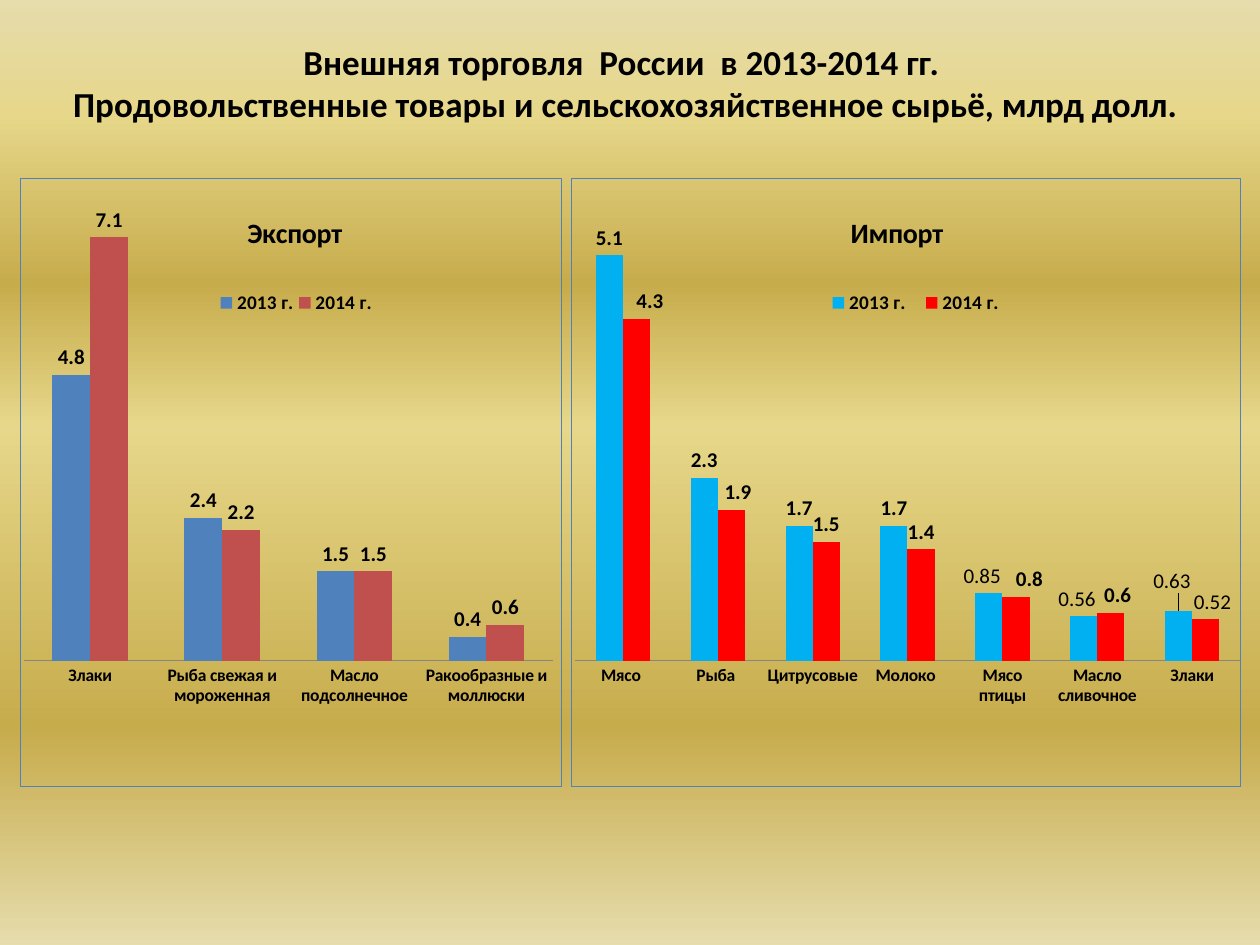
from lxml.etree import fromstring
from pptx import Presentation
from pptx.chart.data import CategoryChartData
from pptx.dml.color import RGBColor
from pptx.enum.chart import XL_CHART_TYPE as ChartType, XL_LABEL_POSITION as LabelPos
from pptx.enum.chart import XL_LEGEND_POSITION as LegendPos, XL_TICK_MARK as Tick
from pptx.enum.shapes import MSO_SHAPE as Shape
from pptx.enum.text import MSO_ANCHOR as Anchor, PP_ALIGN as Align
from pptx.oxml.ns import nsdecls, qn
from pptx.util import Inches, Pt

FONT = "Calibri"
HEADING = (
    "Внешняя торговля  России  в 2013-2014 гг. ",
    "Продовольственные товары и сельскохозяйственное сырьё, млрд долл.",
)
BACKDROP = ((0, "E6DCAC"), (12, "E6D78A"), (30, "C7AC4C"),
            (45, "E6D78A"), (77, "C7AC4C"), (100, "E6DCAC"))
TOP, HEIGHT = 1.41, 4.84
EXPORT = {
    "title": "Экспорт", "left": 0.16, "width": 4.3, "top_value": 8, "format": "#,##0.#",
    "goods": ("Злаки", "Рыба свежая и мороженная", "Масло подсолнечное",
              "Ракообразные и моллюски"),
    "years": (("2013 г.", "4F81BD", (4.8, 2.4, 1.5, 0.4)),
              ("2014 г.", "C0504D", (7.1, 2.2, 1.5, 0.6))),
    "plot": (0.006, 0.009, 0.978, 0.784),
    "title_at": (0.41, 0.05), "legend_at": (0.36, 0.18, 0.3, 0.05),
    "exact": {}, "shifts": {},
}
IMPORT = {
    "title": "Импорт", "left": 4.53, "width": 5.32, "top_value": 6, "format": "0.0",
    "goods": ("Мясо ", "Рыба ", "Цитрусовые", "Молоко ", "Мясо птицы",
              "Масло сливочное", "Злаки"),
    "years": (("2013 г.", "00B0F0", (5.1, 2.3, 1.7, 1.7, 0.85, 0.56, 0.63)),
              ("2014 г.", "FF0000", (4.3, 1.9, 1.5, 1.4, 0.8, 0.6, 0.52))),
    "plot": (0.006, 0.009, 0.993, 0.784),
    "title_at": (0.41, 0.05), "legend_at": (0.37, 0.18, 0.29, 0.05),
    "exact": {(0, 4): "0.85", (0, 5): "0.56", (0, 6): "0.63", (1, 6): "0.52"},
    "shifts": {(0, 4): (-0.01, 0), (0, 5): (-0.01, 0), (0, 6): (-0.01, -0.02),
               (1, 0): (0.02, 0), (1, 1): (0.01, 0), (1, 3): (0.0, 0),
               (1, 4): (0.02, 0), (1, 5): (0.01, 0), (1, 6): (0.01, 0)},
}


def rgb(color):
    """Turn a hex string into a colour."""
    return RGBColor.from_string(color)


def style(font, size, bold=True):
    """Set the common black lettering."""
    font.name, font.size, font.bold = FONT, Pt(size), bold
    font.color.rgb = rgb("000000")


def place(part, index, box, mode="edge", inner=False):
    """Give a chart part a manual layout in shares of the chart."""
    for old in part.findall(qn("c:layout")):
        part.remove(old)
    rules = '<c:layoutTarget val="inner"/>' if inner else ""
    if mode == "edge":
        rules += '<c:xMode val="edge"/><c:yMode val="edge"/>'
    rules += "".join(f'<c:{side} val="{share}"/>' for side, share in zip("xywh", box))
    part.insert(index, fromstring(
        f'<c:layout {nsdecls("c")}><c:manualLayout>{rules}</c:manualLayout></c:layout>'))


def paint_backdrop(slide):
    """Fill the slide with horizontal gold bands."""
    slide.background.fill.gradient()
    gradient = slide.element.find(".//" + qn("a:gradFill"))
    stops = "".join(f'<a:gs pos="{share * 1000}"><a:srgbClr val="{color}"/></a:gs>'
                    for share, color in BACKDROP)
    gradient.getparent().replace(gradient, fromstring(
        f'<a:gradFill {nsdecls("a")} rotWithShape="1"><a:gsLst>{stops}</a:gsLst>'
        '<a:lin ang="5400000" scaled="0"/></a:gradFill>'))


def add_heading(slide):
    """Write the two centred heading lines."""
    heading = slide.shapes.add_shape(Shape.ROUNDED_RECTANGLE, Inches(0.16), Inches(0.13),
                                     Inches(9.61), Inches(1.05))
    heading.shadow.inherit = False
    heading.fill.background()
    heading.line.fill.background()
    frame = heading.text_frame
    frame.word_wrap, frame.vertical_anchor = True, Anchor.MIDDLE
    for row, line in enumerate(HEADING):
        paragraph = frame.add_paragraph() if row else frame.paragraphs[0]
        paragraph.alignment = Align.CENTER
        run = paragraph.add_run()
        run.text = line
        style(run.font, 20)


def label_years(chart, trade):
    """Colour each year's columns and label their values."""
    for year, (series, (_, color, _)) in enumerate(zip(chart.plots[0].series, trade["years"])):
        series.format.fill.solid()
        series.format.fill.fore_color.rgb = rgb(color)
        labels = series.data_labels
        labels.show_value, labels.position = True, LabelPos.OUTSIDE_END
        labels.number_format, labels.number_format_is_linked = trade["format"], False
        style(labels.font, 12)
        for (owner, good), shift in trade["shifts"].items():
            if owner != year:
                continue
            label = series.points[good].data_label
            label.position = LabelPos.OUTSIDE_END
            exact = trade["exact"].get((year, good))
            if exact:
                run = label.text_frame.paragraphs[0].add_run()
                run.text = exact
                style(run.font, 12, False)
            else:
                style(label.font, 12)
            for entry in series.data_labels._element.findall(qn("c:dLbl")):
                if entry.find(qn("c:idx")).get("val") == str(good):
                    place(entry, 1, shift, mode="factor")


def add_trade_chart(slide, trade):
    """Draw one framed column chart."""
    figures = CategoryChartData(number_format="General")
    figures.categories = trade["goods"]
    for year, _, values in trade["years"]:
        figures.add_series(year, values)
    chart = slide.shapes.add_chart(ChartType.COLUMN_CLUSTERED, Inches(trade["left"]), Inches(TOP),
                                   Inches(trade["width"]), Inches(HEIGHT), figures).chart
    style(chart.font, 10, False)
    space = chart.element
    space.find(qn("c:txPr")).addprevious(fromstring(
        f'<c:spPr {nsdecls("c", "a")}><a:noFill/><a:ln w="9525"><a:solidFill>'
        '<a:srgbClr val="4F81BD"/></a:solidFill></a:ln></c:spPr>'))
    plot = chart.plots[0]
    plot.gap_width, plot.overlap, plot.vary_by_categories = 150, 0, False
    place(space.find(".//" + qn("c:plotArea")), 0, trade["plot"], inner=True)

    goods_axis, value_axis = chart.category_axis, chart.value_axis
    goods_axis.major_tick_mark = goods_axis.minor_tick_mark = Tick.NONE
    goods_axis.format.line.color.rgb = rgb("868686")
    style(goods_axis.tick_labels.font, 10)
    value_axis.visible = value_axis.has_major_gridlines = False
    value_axis.minimum_scale, value_axis.maximum_scale = 0, trade["top_value"]
    value_axis.tick_labels.number_format = trade["format"]
    value_axis.tick_labels.number_format_is_linked = False

    run = chart.chart_title.text_frame.paragraphs[0].add_run()
    run.text = trade["title"]
    style(run.font, 16)
    title = space.find(".//" + qn("c:title"))
    place(title, 1, trade["title_at"])
    title.find(qn("c:overlay")).set("val", "1")
    chart.has_legend = True
    legend = chart.legend
    legend.position, legend.include_in_layout = LegendPos.TOP, True
    style(legend.font, 11)
    place(space.find(".//" + qn("c:legend")), 1, trade["legend_at"])
    label_years(chart, trade)


def main():
    """Build the foreign trade slide."""
    deck = Presentation()
    deck.slide_width, deck.slide_height = Inches(10), Inches(7.5)
    slide = deck.slides.add_slide(deck.slide_layouts[6])
    paint_backdrop(slide)
    add_heading(slide)
    for trade in (EXPORT, IMPORT):
        add_trade_chart(slide, trade)
    deck.save("out.pptx")


if __name__ == "__main__":
    main()
